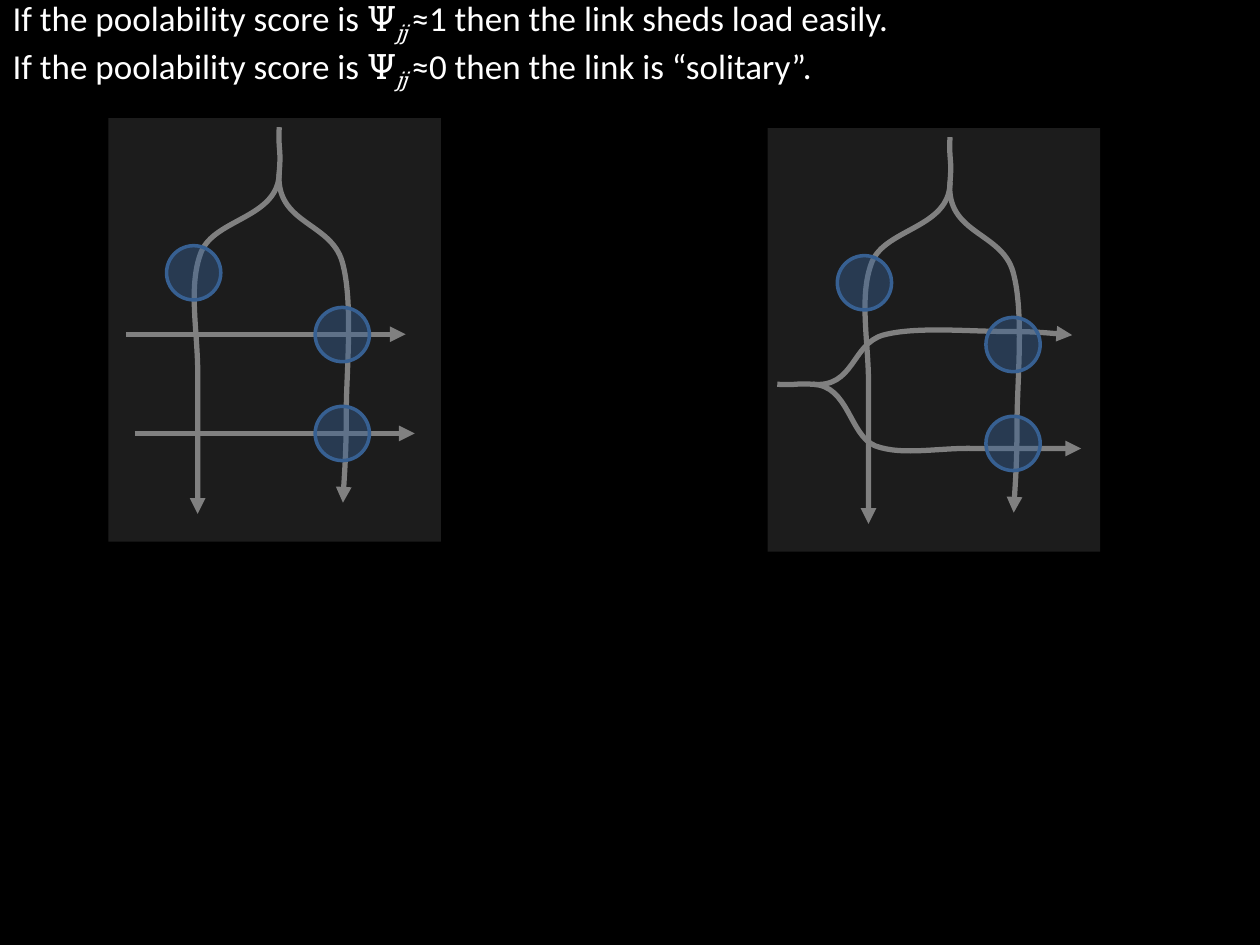
import lxml.etree
import pptx
import pptx.dml.color
import pptx.enum.shapes
import pptx.enum.text
import pptx.oxml.ns
import pptx.util

Pt = pptx.util.Pt
qn = pptx.oxml.ns.qn


def color(hex_value):
    return pptx.dml.color.RGBColor.from_string(hex_value)


def apply_format(target, values):
    for name, value in values.items():
        setattr(target, name, value)


class RoadDiagram:
    BACKGROUND = "000000"
    PANEL = "1C1C1C"
    ROAD = "808080"
    HUB = "376092"
    TEXT = "FFFFFF"
    HUB_SIZE = 31
    HUB_OPACITY = 45000
    ROAD_WIDTH = 3
    HUB_LINE_WIDTH = 2
    SUBSCRIPT = "-25000"
    PLAIN = {"name": "Calibri", "size": Pt(20), "italic": False}
    SYMBOL = {"name": "Roboto Slab", "size": Pt(20), "italic": False}
    INDEX = {"name": "Roboto Slab", "size": Pt(20), "italic": True}

    def __init__(self, presentation):
        self.slide = presentation.slides.add_slide(presentation.slide_layouts[5])
        self.slide.background.fill.solid()
        self.slide.background.fill.fore_color.rgb = color(self.BACKGROUND)

    def title(self, left, top, width, height, statements):
        heading = self.slide.shapes.title
        apply_format(heading, {"left": Pt(left), "top": Pt(top),
                               "width": Pt(width), "height": Pt(height)})
        apply_format(heading.text_frame, {
            "word_wrap": True,
            "auto_size": pptx.enum.text.MSO_AUTO_SIZE.NONE,
            "vertical_anchor": pptx.enum.text.MSO_ANCHOR.MIDDLE,
        })
        paragraph = heading.text_frame.paragraphs[0]
        paragraph.alignment = pptx.enum.text.PP_ALIGN.LEFT
        for number, (condition, outcome) in enumerate(statements):
            if number:
                paragraph.add_line_break()
            for wording, style in ((condition, self.PLAIN), ("Ψ", self.SYMBOL),
                                   ("jj ", self.INDEX), (outcome, self.PLAIN)):
                run = paragraph.add_run()
                run.text = wording
                apply_format(run.font, style)
                run.font.color.rgb = color(self.TEXT)
                if style is self.INDEX:
                    run.font._element.set("baseline", self.SUBSCRIPT)

    def panel(self, left, top, width, height):
        backdrop = self.slide.shapes.add_shape(
            pptx.enum.shapes.MSO_SHAPE.RECTANGLE,
            Pt(left), Pt(top), Pt(width), Pt(height))
        backdrop.shadow.inherit = False
        backdrop.fill.solid()
        backdrop.fill.fore_color.rgb = color(self.PANEL)
        backdrop.line.fill.background()

    def hub(self, left, top):
        circle = self.slide.shapes.add_shape(
            pptx.enum.shapes.MSO_SHAPE.OVAL,
            Pt(left), Pt(top), Pt(self.HUB_SIZE), Pt(self.HUB_SIZE))
        circle.shadow.inherit = False
        circle.fill.solid()
        circle.fill.fore_color.rgb = color(self.HUB)
        tint = circle.fill._xPr.find(qn("a:solidFill"))[0]
        lxml.etree.SubElement(tint, qn("a:alpha"), val=str(self.HUB_OPACITY))
        circle.line.color.rgb = color(self.HUB)
        circle.line.width = Pt(self.HUB_LINE_WIDTH)

    def arrow_line(self, line):
        line.color.rgb = color(self.ROAD)
        line.width = Pt(self.ROAD_WIDTH)
        lxml.etree.SubElement(line._get_or_add_ln(), qn("a:tailEnd"), type="triangle")

    def straight_road(self, left, right, height):
        road = self.slide.shapes.add_connector(
            pptx.enum.shapes.MSO_CONNECTOR.STRAIGHT,
            Pt(left), Pt(height), Pt(right), Pt(height))
        self.arrow_line(road.line)
        lxml.etree.SubElement(road._element.spPr, qn("a:effectLst"))

    def curved_road(self, points, origin=(0, 0)):
        start, *bends = [(Pt(origin[0] + x), Pt(origin[1] + y)) for x, y in points]
        builder = self.slide.shapes.build_freeform(*start)
        builder.add_line_segments(bends, close=False)
        road = builder.convert_to_shape()
        segments = road._element.xpath(".//a:lnTo")
        for first in range(0, len(segments), 3):
            curve = lxml.etree.Element(qn("a:cubicBezTo"))
            segments[first].addprevious(curve)
            for segment in segments[first:first + 3]:
                curve.append(segment[0])
                segment.getparent().remove(segment)
        road.shadow.inherit = False
        road.fill.background()
        self.arrow_line(road.line)


STATEMENTS = [
    ("If the poolability score is ", "≈1 then the link sheds load easily."),
    ("If the poolability score is ", "≈0 then the link is “solitary”."),
]
PANEL_SIZE = (190, 242)
WEST_ROAD = [(0, 0), (-0.7, 14), (1.2, 11.5), (0, 25.7),
             (0, 52), (-36.7, 52), (-44.6, 71.3),
             (-52.6, 91.4), (-46, 119), (-46.6, 144),
             (-46.6, 169), (-46.6, 208), (-46.6, 221)]
EAST_ROAD = [(0, 25.7), (-2.5, 55.4), (29.5, 54), (36, 77),
             (42.5, 100), (38.3, 140), (38.3, 163),
             (38.3, 186), (36.7, 206), (36.4, 214.6)]
HUBS = [(-64.4, 67.7), (20.5, 103), (20.5, 159.5)]
STRAIGHT_CROSSINGS = [(72, 231.8, 191), (77, 237, 247.7)]
FORKED_CROSSINGS = [
    [(444.2, 219.6), (455.8, 220.3), (453.6, 218.9), (464.4, 219.6),
     (485.3, 220.3), (485.3, 249), (500.4, 254.9),
     (516.2, 260.6), (537.8, 255.6), (557.3, 256.3),
     (576.7, 256.3), (607.7, 256.3), (617.8, 256.3)],
    [(464.4, 219.6), (488.2, 221.8), (486.7, 196.6), (504.7, 191.5),
     (522.7, 186.5), (554.4, 189.4), (572.4, 189.4),
     (590.4, 189.4), (605.5, 190.8), (612.7, 191.5)],
]
NETWORKS = [
    ((62, 67.5), (159.6, 72.7), RoadDiagram.straight_road, STRAIGHT_CROSSINGS),
    ((438.7, 73.2), (542.9, 78.4), RoadDiagram.curved_road,
     [(crossing,) for crossing in FORKED_CROSSINGS]),
]


def main():
    presentation = pptx.Presentation()
    presentation.slide_width, presentation.slide_height = Pt(720), Pt(540)
    diagram = RoadDiagram(presentation)
    diagram.title(0, 0, 720, 50.4, STATEMENTS)
    for corner, junction, draw_crossing, crossings in NETWORKS:
        diagram.panel(*corner, *PANEL_SIZE)
        for road in (WEST_ROAD, EAST_ROAD):
            diagram.curved_road(road, junction)
        for crossing in crossings:
            draw_crossing(diagram, *crossing)
        for x, y in HUBS:
            diagram.hub(junction[0] + x, junction[1] + y)
    presentation.save("out.pptx")


if __name__ == "__main__":
    main()
